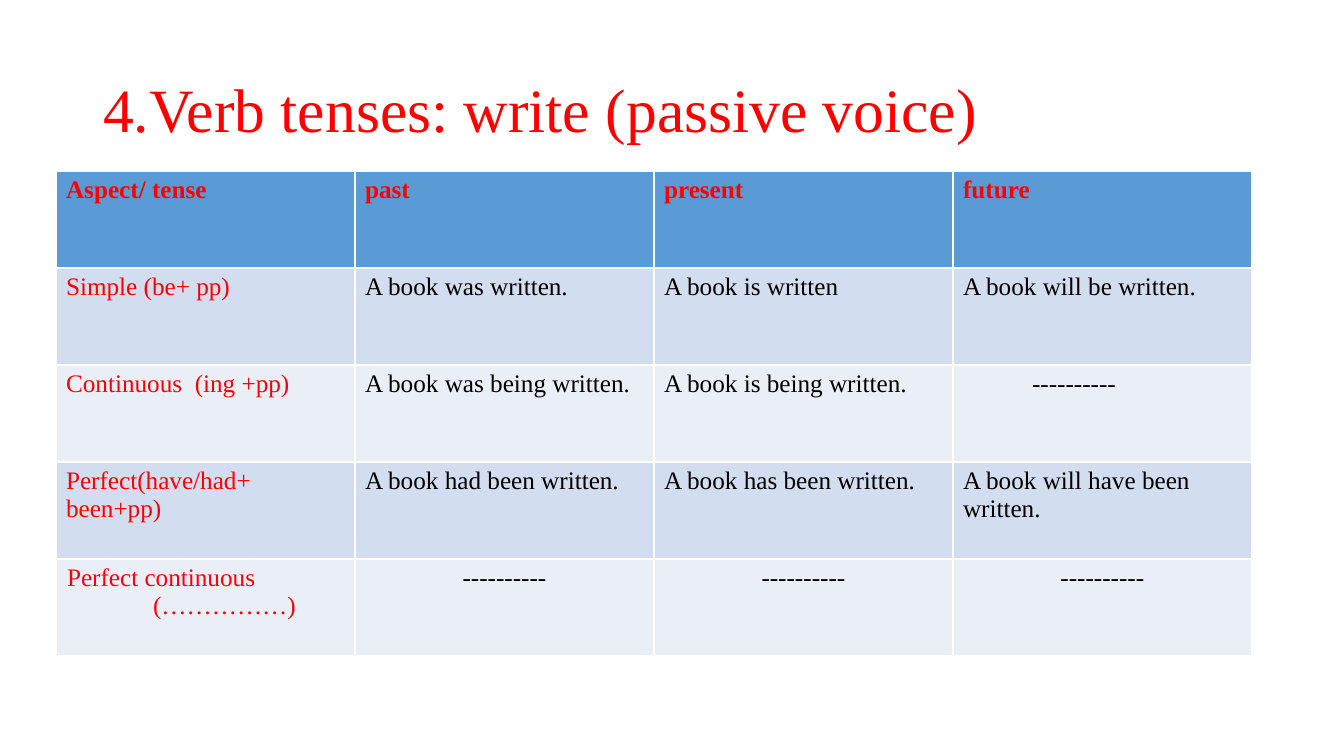
"""Build a slide with a table of passive verb tenses."""
from dataclasses import dataclass

from pptx import Presentation
from pptx.dml.color import RGBColor
from pptx.enum.text import MSO_ANCHOR, MSO_AUTO_SIZE, PP_ALIGN
from pptx.util import Pt

LEFT, CENTER = PP_ALIGN.LEFT, PP_ALIGN.CENTER
MIDDLE, TOP = MSO_ANCHOR.MIDDLE, MSO_ANCHOR.TOP
NO_FIT = MSO_AUTO_SIZE.NONE
SCALE = 914400 / 100.8


def px(count):
    return round(count * SCALE)


@dataclass(frozen=True)
class Theme:
    font: str = "Times New Roman"
    red: str = "FF0000"
    black: str = "000000"
    head: str = "5B9BD5"
    bands: tuple = ("D2DEEF", "EAEFF7")
    title: int = 44
    body: int = 18


class Deck:
    def __init__(self, theme, width, height):
        self.theme = theme
        self.show = Presentation()
        self.show.slide_width, self.show.slide_height = px(width), px(height)
        self.slide = self.show.slides.add_slide(self.show.slide_layouts[5])

    def label(self, para, text, size, color, bold=False, align=LEFT, indent=0):
        para.alignment = align
        if indent:
            para._p.get_or_add_pPr().set("marL", str(px(indent)))
        run = para.add_run()
        run.text = text
        style = {"name": self.theme.font, "size": Pt(size), "bold": bold}
        for key, value in style.items():
            setattr(run.font, key, value)
        run.font.color.rgb = RGBColor.from_string(color)

    def title(self, text, left, top, width, height):
        shape = self.slide.shapes.title
        box = {"left": left, "top": top, "width": width, "height": height}
        for key, value in box.items():
            setattr(shape, key, px(value))
        frame = shape.text_frame
        style = {"word_wrap": True, "auto_size": NO_FIT, "vertical_anchor": MIDDLE}
        for key, value in style.items():
            setattr(frame, key, value)
        para = frame.paragraphs[0]
        para.line_spacing = 0.9
        self.label(para, text, self.theme.title, self.theme.red)

    def cell(self, cell, lines, fill, color, bold):
        cell.fill.solid()
        cell.fill.fore_color.rgb = RGBColor.from_string(fill)
        cell.vertical_anchor = TOP
        frame = cell.text_frame
        for i, (text, style) in enumerate(lines):
            para = frame.add_paragraph() if i else frame.paragraphs[0]
            self.label(para, text, self.theme.body, color, bold, **style)

    def table(self, rows, left, top, wide, high):
        count = len(rows[0])
        size = (left, top, wide * count, high * len(rows))
        frame = self.slide.shapes.add_table(len(rows), count, *map(px, size))
        grid = frame.table
        for column in grid.columns:
            column.width = px(wide)
        for r, row in enumerate(rows):
            grid.rows[r].height = px(high)
            fill = self.theme.bands[(r - 1) % 2] if r else self.theme.head
            for c, item in enumerate(row):
                lines = [(item, {})] if isinstance(item, str) else item
                color = self.theme.black if r and c else self.theme.red
                self.cell(grid.cell(r, c), lines, fill, color, r == 0)


DASH = "----------"
MID = [(DASH, {"align": CENTER})]
TENSES = [
    ["Aspect/ tense", "past", "present", "future"],
    ["Simple (be+ pp)", "A book was written.", "A book is written",
     "A book will be written."],
    ["Continuous  (ing +pp)", "A book was being written.",
     "A book is being written.", [(DASH, {"indent": 69})]],
    ["Perfect(have/had+ been+pp)", "A book had been written.",
     "A book has been written.", "A book will have been written."],
    [[("Perfect continuous", {"indent": 1}), ("(……………)", {"indent": 87})],
     MID, MID, MID],
]


def main():
    deck = Deck(Theme(), 1344, 756)
    deck.title("4.Verb tenses: write (passive voice)", 93, 40, 1159, 146)
    deck.table(TENSES, 56, 171, 299, 97)
    deck.show.save("out.pptx")


if __name__ == "__main__":
    main()
